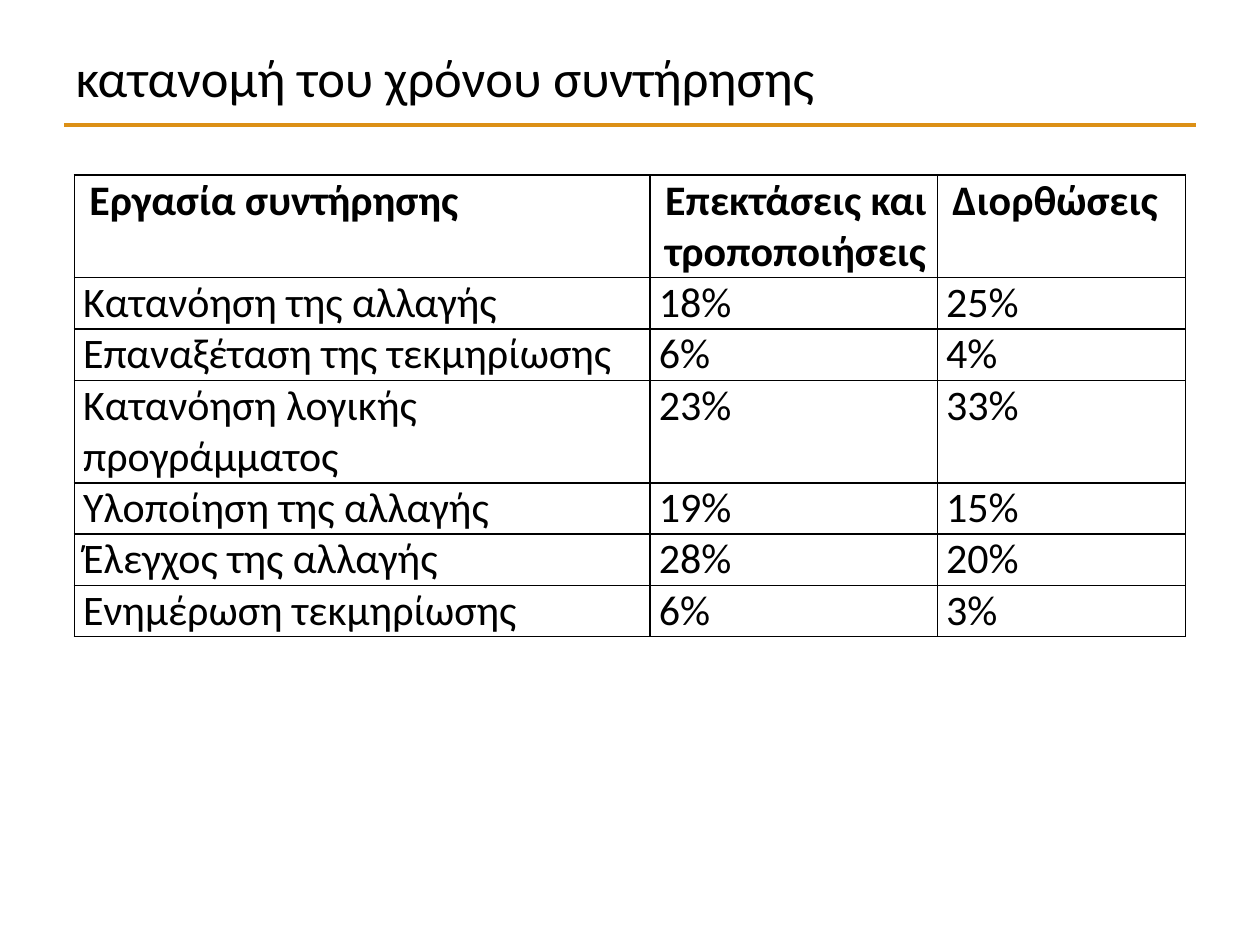
from lxml.etree import SubElement as Sub
from pptx import Presentation
from pptx.dml.color import RGBColor
from pptx.enum.shapes import MSO_CONNECTOR as Conn
from pptx.enum.text import MSO_ANCHOR as Anchor, PP_ALIGN as Align
from pptx.oxml.ns import qn
from pptx.util import Inches, Pt

INK, GOLD = "000000", "DC9016"
ROWS = [
    ("Εργασία συντήρησης", "Επεκτάσεις και τροποποιήσεις", "Διορθώσεις"),
    ("Κατανόηση της αλλαγής", "18%", "25%"),
    ("Επαναξέταση της τεκμηρίωσης", "6%", "4%"),
    ("Κατανόηση λογικής προγράμματος", "23%", "33%"),
    ("Υλοποίηση της αλλαγής", "19%", "15%"),
    ("Έλεγχος της αλλαγής", "28%", "20%"),
    ("Ενημέρωση τεκμηρίωσης", "6%", "3%"),
]
WIDTHS = (4.57, 2.28, 1.97)
LINE = 0.4
TALL = (0, 3)  # rows that hold two lines of text


def color(code):
    return RGBColor.from_string(code)


def assign(item, values):
    for name, value in values.items():
        setattr(item, name, value)


class Deck:
    font = "Calibri"

    def __init__(self, wide, high):
        self.prs = Presentation()
        self.prs.slide_width, self.prs.slide_height = Inches(wide), Inches(high)
        self.slide = self.prs.slides.add_slide(self.prs.slide_layouts[5])

    def label(self, frame, text, size, bold=False):
        """Put styled text in the frame and return its paragraph."""
        par = frame.paragraphs[0]
        par.alignment = Align.LEFT
        run = par.add_run()
        run.text = text
        assign(run.font, {"name": self.font, "size": Pt(size), "bold": bold})
        run.font.color.rgb = color(INK)
        return par

    def title(self, text, left, top, wide, high):
        shape = self.slide.shapes.title
        assign(shape, {"left": Inches(left), "top": Inches(top),
                       "width": Inches(wide), "height": Inches(high)})
        shape.text_frame.vertical_anchor = Anchor.MIDDLE
        self.label(shape.text_frame, text, 30)

    def rule(self, left, right, y):
        line = self.slide.shapes.add_connector(
            Conn.STRAIGHT, Inches(left), Inches(y), Inches(right), Inches(y))
        line.line.color.rgb = color(GOLD)
        line.line.width = Pt(2.5)
        Sub(line._element.spPr, qn("a:effectLst"))

    def border(self, cell):
        props = cell._tc.get_or_add_tcPr()
        for side in "LRTB":
            edge = Sub(props, qn(f"a:ln{side}"), w=str(Pt(1)))
            Sub(Sub(edge, qn("a:solidFill")), qn("a:srgbClr"), val=INK)

    def cell(self, cell, text, head):
        assign(cell, {"margin_left": Inches(0.07), "margin_right": Inches(0.07),
                      "margin_top": 0, "margin_bottom": 0,
                      "vertical_anchor": Anchor.TOP})
        self.border(cell)
        cell.fill.background()
        par = self.label(cell.text_frame, text, 24, head)
        par.space_after = Pt(4 if head else 3)
        if head:
            par.space_before = Pt(4)
            par._p.get_or_add_pPr().set("marL", str(Inches(0.05)))

    def table(self, rows, widths, left, top):
        highs = [LINE * (2 if i in TALL else 1) for i in range(len(rows))]
        table = self.slide.shapes.add_table(
            len(rows), len(widths), Inches(left), Inches(top),
            Inches(sum(widths)), Inches(sum(highs))).table
        assign(table, {"first_row": False, "horz_banding": False})
        for col, wide in zip(table.columns, widths):
            col.width = Inches(wide)
        for i, (row, high) in enumerate(zip(table.rows, highs)):
            row.height = Inches(high)
            for cell, text in zip(row.cells, rows[i]):
                self.cell(cell, text, i == 0)


def main():
    deck = Deck(10, 7.5)
    deck.rule(0.51, 9.49, 0.99)
    deck.title("κατανομή του χρόνου συντήρησης", 0.5, 0.3, 9, 0.61)
    deck.table(ROWS, WIDTHS, 0.59, 1.39)
    deck.prs.save("out.pptx")


if __name__ == "__main__":
    main()
